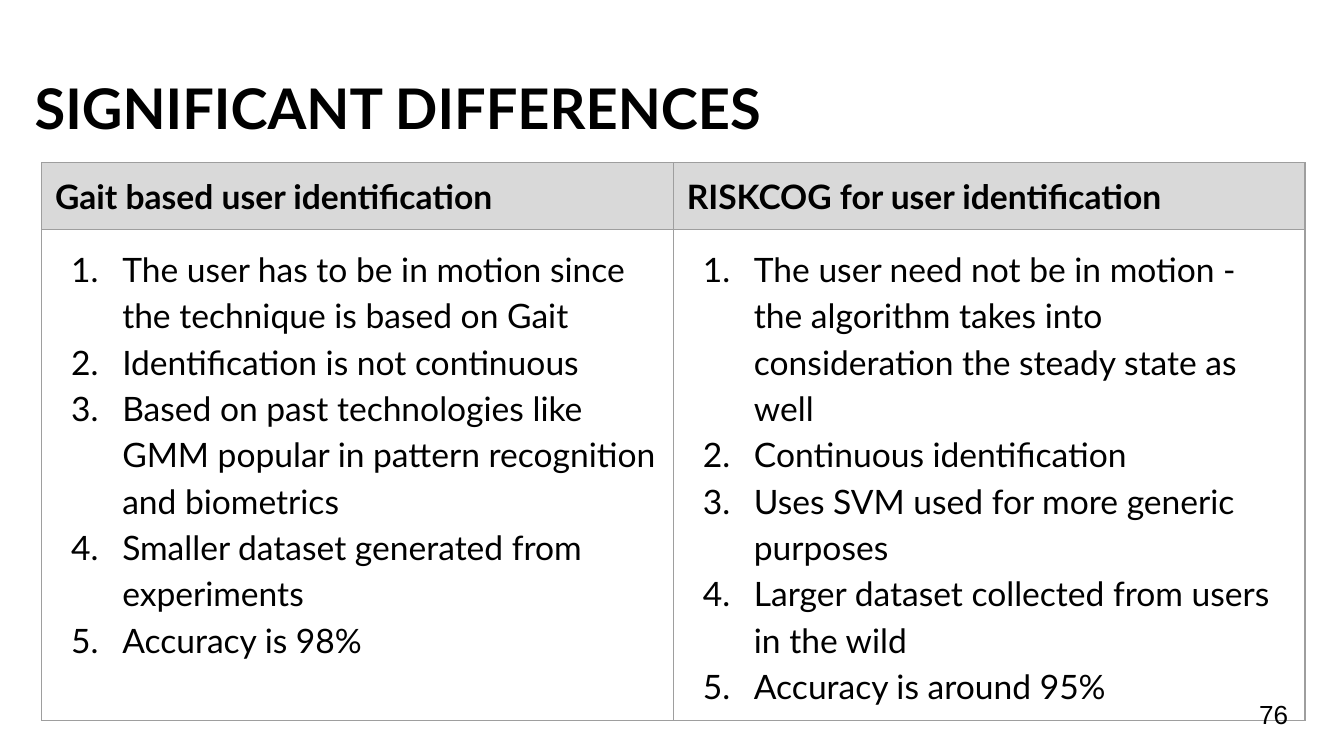
"""Build a slide with a two-column comparison table of user identification methods."""
from lxml import etree
from pptx import Presentation
from pptx.dml.color import RGBColor
from pptx.enum import text
from pptx.oxml import ns
from pptx.util import Inches, Pt

BLACK = RGBColor(0x00, 0x00, 0x00)
HEADER_FILL = RGBColor(0xD9, 0xD9, 0xD9)
WHITE = RGBColor(0xFF, 0xFF, 0xFF)
BORDER = RGBColor(0x9E, 0x9E, 0x9E)
PAD = Inches(0.1)

COLUMNS = [
    ("Gait based user identification", [
        "The user has to be in motion since the technique is based on Gait",
        "Identification is not continuous",
        "Based on past technologies like GMM popular in pattern recognition and biometrics",
        "Smaller dataset generated from experiments",
        "Accuracy is 98%",
    ]),
    ("RISKCOG for user identification", [
        "The user need not be in motion - the algorithm takes into consideration the steady state as well",
        "Continuous identification",
        "Uses SVM used for more generic purposes",
        "Larger dataset collected from users in the wild",
        "Accuracy is around 95%",
    ]),
]


def write(tf, lines, size=18, font="Lato", bold=False, numbered=False):
    tf.word_wrap = True
    for i, line in enumerate(lines):
        p = tf.paragraphs[0] if i == 0 else tf.add_paragraph()
        r = p.add_run()
        r.text = line
        r.font.size = Pt(size)
        r.font.name = font
        r.font.bold = bold
        r.font.color.rgb = BLACK
        if numbered:
            p.line_spacing = 1.15
            pPr = p._p.get_or_add_pPr()
            pPr.set("marL", str(Inches(0.5)))
            pPr.set("indent", str(Inches(-0.38)))
            etree.SubElement(pPr, ns.qn("a:buAutoNum"), type="arabicPeriod")


def add_borders(cell):
    tcPr = cell._tc.get_or_add_tcPr()
    for i, side in enumerate(("lnL", "lnR", "lnT", "lnB")):
        ln = etree.Element(ns.qn(f"a:{side}"), w=str(Pt(0.75)))
        fill = etree.SubElement(ln, ns.qn("a:solidFill"))
        etree.SubElement(fill, ns.qn("a:srgbClr"), val=str(BORDER))
        tcPr.insert(i, ln)


prs = Presentation()
prs.slide_width = Inches(10)
prs.slide_height = Inches(10) * 9 // 16
s = prs.slides.add_slide(prs.slide_layouts[6])

table = s.shapes.add_table(2, 2, Inches(0.31), Inches(1.21), Inches(9.4), Inches(4.15)).table
table.rows[0].height = Inches(0.5)
table.rows[1].height = Inches(3.65)
for col, (heading, points) in enumerate(COLUMNS):
    table.columns[col].width = Inches(4.7)
    for row, lines in enumerate(([heading], points)):
        cell = table.cell(row, col)
        cell.margin_left = cell.margin_right = cell.margin_top = cell.margin_bottom = PAD
        cell.fill.solid()
        cell.fill.fore_color.rgb = WHITE if row else HEADER_FILL
        add_borders(cell)
        write(cell.text_frame, lines, bold=row == 0, numbered=row == 1)

for line, box, anchor, style in (
    ("SIGNIFICANT DIFFERENCES", (0.16, 0.45, 9.69, 0.63), text.MSO_ANCHOR.TOP,
     {"size": 30, "bold": True}),
    ("76", (9.27, 5.1, 0.6, 0.43), text.MSO_ANCHOR.MIDDLE, {"size": 14, "font": "Arial"}),
):
    tf = s.shapes.add_textbox(*map(Inches, box)).text_frame
    tf.margin_left = tf.margin_right = tf.margin_top = tf.margin_bottom = PAD
    tf.vertical_anchor = anchor
    write(tf, [line], **style)

prs.save("out.pptx")
